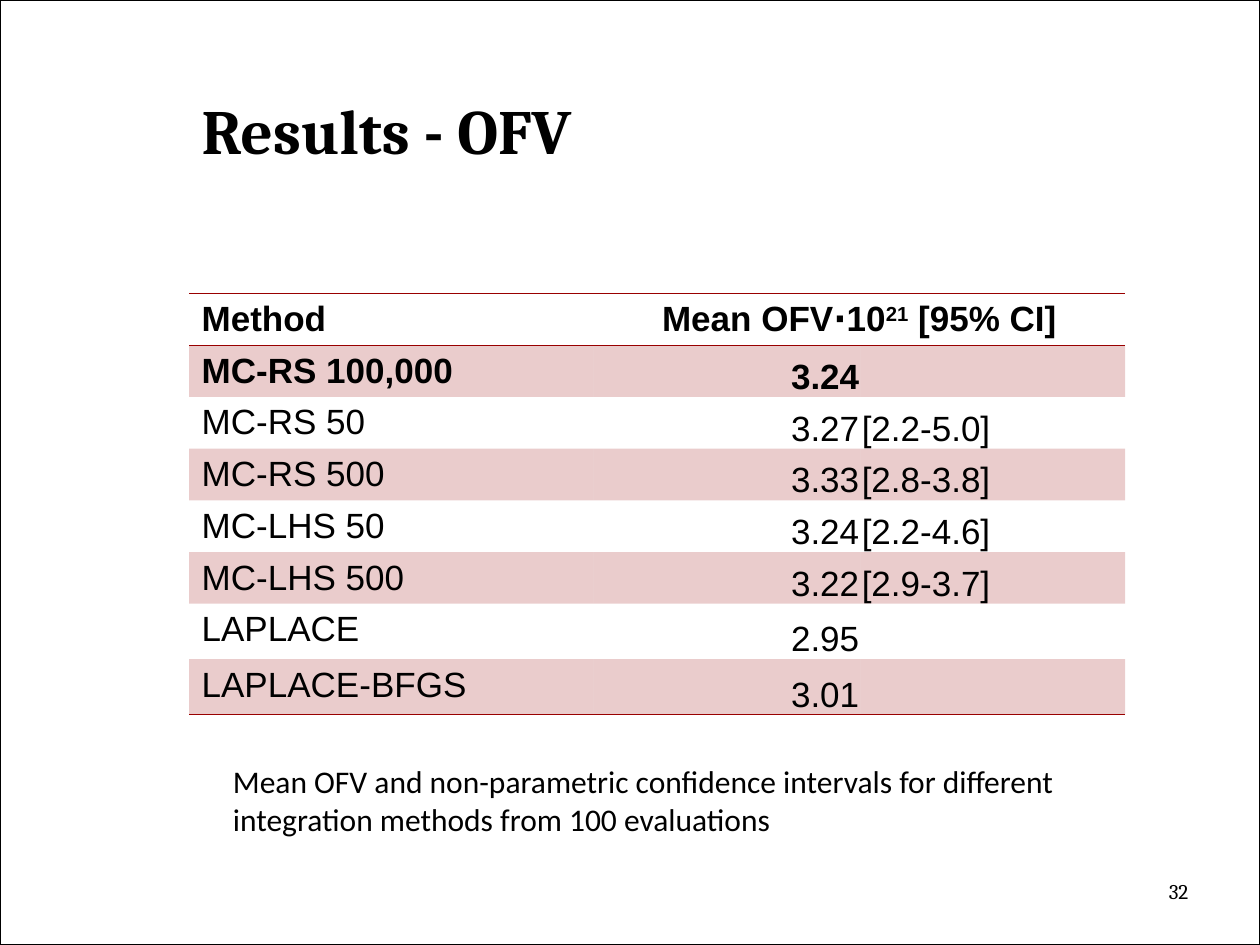
from lxml import etree
from pptx import Presentation
from pptx.dml.color import RGBColor
from pptx.enum.shapes import MSO_SHAPE
from pptx.enum.text import MSO_ANCHOR, MSO_AUTO_SIZE, PP_ALIGN
from pptx.oxml.ns import qn
from pptx.util import Inches, Pt

RECTANGLE = MSO_SHAPE.RECTANGLE
BOTTOM, TOP = MSO_ANCHOR.BOTTOM, MSO_ANCHOR.TOP
LEFT, CENTER, RIGHT = PP_ALIGN.LEFT, PP_ALIGN.CENTER, PP_ALIGN.RIGHT
FIT_SHAPE = MSO_AUTO_SIZE.SHAPE_TO_FIT_TEXT

BLACK, RED = "000000", "990000"
PLAIN_TABLE_STYLE = "{2D5ABB26-0587-4C30-8999-92F81FD0307C}"
COLUMN_WIDTHS = (3.21, 2.12, 2.1)
ROW_HEIGHT, LAPLACE_ROW_HEIGHT = 0.41, 0.44

RESULTS = [
    ("MC-RS 100,000", "3.24", ""),
    ("MC-RS 50", "3.27", "[2.2-5.0]"),
    ("MC-RS 500", "3.33", "[2.8-3.8]"),
    ("MC-LHS 50", "3.24", "[2.2-4.6]"),
    ("MC-LHS 500", "3.22", "[2.9-3.7]"),
    ("LAPLACE", "2.95", ""),
    ("LAPLACE-BFGS", "3.01", ""),
]


def color(hex_code):
    return RGBColor.from_string(hex_code)


def style(paragraph, font_name, size, bold=False, align=LEFT):
    paragraph.alignment = align
    font = paragraph.font
    font.name, font.size, font.bold = font_name, Pt(size), bold
    font.color.rgb = color(BLACK)


def add_rule(cell, edge):
    """Draw a red 1 pt border on one edge (lnT or lnB) of a cell."""
    properties = cell._tc.get_or_add_tcPr()
    line = etree.SubElement(properties, qn(f"a:{edge}"), w=str(Pt(1)))
    fill = etree.SubElement(line, qn("a:solidFill"))
    etree.SubElement(fill, qn("a:srgbClr"), val=RED)


def fill_band(cell, banded):
    if not banded:
        cell.fill.background()
        return
    cell.fill.solid()
    cell.fill.fore_color.rgb = color(RED)
    tint = cell._tc.tcPr.find(".//" + qn("a:solidFill") + "/" + qn("a:srgbClr"))
    for tint in cell._tc.tcPr.findall(qn("a:solidFill") + "/" + qn("a:srgbClr")):
        etree.SubElement(tint, qn("a:alpha"), val="20000")


def add_frame(slide, left, top, width, height):
    frame = slide.shapes.add_shape(RECTANGLE, left, top, width, height)
    frame.shadow.inherit = False
    frame.fill.background()
    frame.line.color.rgb = color(BLACK)
    frame.line.width = Pt(0.75)


def place_title(slide, left, top, width, height):
    title = slide.shapes.title
    title.left, title.top, title.width, title.height = left, top, width, height
    text = title.text_frame
    text.text = "Results - OFV"
    text.vertical_anchor = BOTTOM
    text.margin_bottom = 0
    style(text.paragraphs[0], "Cambria", 36, bold=True)


def fill_header(table):
    method, mean, mean_end = table.rows[0].cells
    mean.merge(mean_end)
    for cell in (method, mean, mean_end):
        add_rule(cell, "lnT")
        add_rule(cell, "lnB")
        fill_band(cell, False)
    method.text = "Method"
    style(method.text_frame.paragraphs[0], "Arial", 20, bold=True)

    heading = mean.text_frame.paragraphs[0]
    style(heading, "Arial", 20, bold=True, align=CENTER)
    heading.add_run().text = "Mean OFV⋅10"
    exponent = heading.add_run()
    exponent.text = "21"
    exponent.font._element.set("baseline", "30000")
    heading.add_run().text = " [95% CI]"


def fill_result(cells, values, banded, bold, last):
    for column, (cell, value) in enumerate(zip(cells, values)):
        if last:
            add_rule(cell, "lnB")
        fill_band(cell, banded)
        cell.text = value
        if column:
            cell.margin_left = cell.margin_right = cell.margin_top = Inches(0.01)
            cell.margin_bottom = 0
        cell.vertical_anchor = BOTTOM if column else TOP
        style(cell.text_frame.paragraphs[0], "Arial", 20, bold,
              RIGHT if column == 1 else LEFT)


def add_results_table(slide, left, top, width, height):
    table = slide.shapes.add_table(
        len(RESULTS) + 1, len(COLUMN_WIDTHS), left, top, width, height).table
    table._tbl.tblPr.find(qn("a:tableStyleId")).text = PLAIN_TABLE_STYLE
    table.first_row = table.horz_banding = False
    for column, column_width in zip(table.columns, COLUMN_WIDTHS):
        column.width = Inches(column_width)
    table.rows[0].height = Inches(ROW_HEIGHT)
    fill_header(table)
    for index, values in enumerate(RESULTS, start=1):
        row = table.rows[index]
        is_laplace = values[0].startswith("LAPLACE")
        row.height = Inches(LAPLACE_ROW_HEIGHT if is_laplace else ROW_HEIGHT)
        fill_result(row.cells, values, banded=index % 2 == 1,
                    bold=index == 1, last=index == len(RESULTS))


def add_caption(slide, left, top, width, height):
    text = slide.shapes.add_textbox(left, top, width, height).text_frame
    text.word_wrap = False
    text.auto_size = FIT_SHAPE
    text.text = ("Mean OFV and non-parametric confidence intervals for different\n"
                 "integration methods from 100 evaluations")
    for paragraph in text.paragraphs:
        style(paragraph, "Calibri", 18)


def add_page_number(slide, left, top, width, height):
    text = slide.shapes.add_textbox(left, top, width, height).text_frame
    text.word_wrap = True
    text.text = "32"
    style(text.paragraphs[0], "Cambria", 12, align=RIGHT)


def main():
    deck = Presentation()
    deck.slide_width, deck.slide_height = Inches(10), Inches(7.5)
    slide = deck.slides.add_slide(deck.slide_layouts[5])

    add_frame(slide, 0, 0, deck.slide_width, deck.slide_height)
    place_title(slide, Inches(1.5), Inches(0.14), Inches(8.04), Inches(1.19))
    add_results_table(slide, Inches(1.5), Inches(2.33), Inches(7.43), Inches(3.34))
    add_caption(slide, Inches(1.75), Inches(6), Inches(6.98), Inches(0.71))
    add_page_number(slide, Inches(8.58), Inches(6.92), Inches(0.95), Inches(0.42))

    deck.save("out.pptx")


if __name__ == "__main__":
    main()
